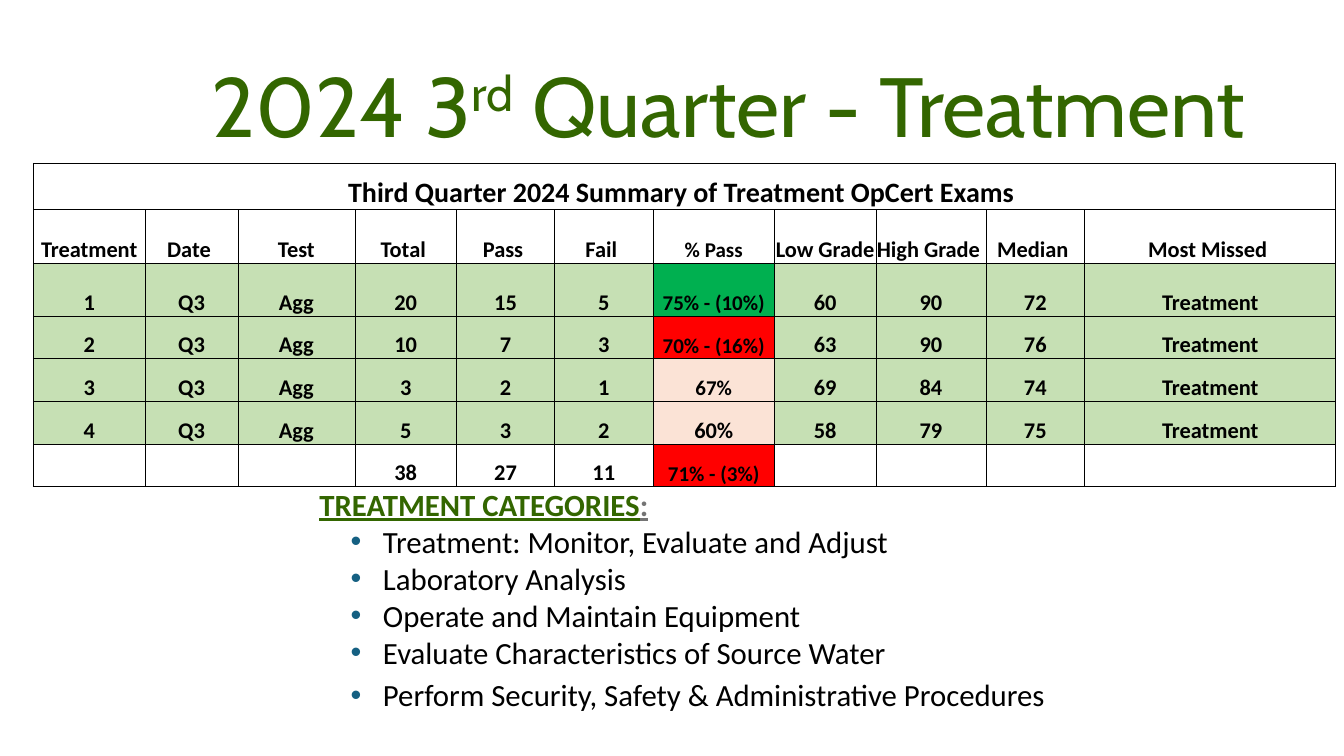
from lxml import etree
from pptx import Presentation
from pptx.dml.color import RGBColor
from pptx.enum.text import MSO_ANCHOR, PP_ALIGN
from pptx.oxml.ns import qn
from pptx.util import Inches, Pt

CENTER, BOTTOM = PP_ALIGN.CENTER, MSO_ANCHOR.BOTTOM

THEME = {
    "title_font": "Cabin", "body_font": "Calibri",
    "title_size": 60, "body_size": 22, "caption_size": 20, "cell_size": 16, "rate_size": 15,
    "heading": "336600", "colon": "747474", "text": "000000", "bullet": "156082",
    "row": "C6E0B4", "up": "00B050", "down": "FF0000", "neutral": "FBE3D6",
}


def set_font(font, face, size, color="text", bold=False):
    font.name = THEME[face]
    font.size = Pt(THEME[size])
    font.bold = bold
    font.color.rgb = RGBColor.from_string(THEME[color])


def add_child(parent, tag, **attributes):
    return etree.SubElement(parent, qn(tag), attributes)


deck = Presentation()
deck.slide_width, deck.slide_height = Inches(13.33), Inches(7.5)
slide = deck.slides.add_slide(deck.slide_layouts[6])

# Title with a raised ordinal
title = slide.shapes.add_textbox(Inches(1.36), Inches(0.49), Inches(11.73), Inches(1.1)).text_frame
title.word_wrap = True
title.vertical_anchor = BOTTOM
headline = title.paragraphs[0]
headline.alignment = CENTER
headline.line_spacing = 0.9
set_font(headline.font, "title_font", "title_size", "heading")
for words, baseline in [("2024 3", "0"), ("rd", "30000"), (" Quarter - Treatment", "0")]:
    part = headline.add_run()
    part.text = words
    part.font._element.set("baseline", baseline)

# Treatment categories
categories = slide.shapes.add_textbox(Inches(3.07), Inches(4.77), Inches(7.88), Inches(2.75)).text_frame
categories.word_wrap = True
heading = categories.paragraphs[0]
for words, color in [("TREATMENT CATEGORIES", "heading"), (":", "colon")]:
    part = heading.add_run()
    part.text = words
    set_font(part.font, "body_font", "body_size", color, bold=True)
    part.font.underline = True

CATEGORIES = [
    "Treatment: Monitor, Evaluate and Adjust",
    "Laboratory Analysis",
    "Operate and Maintain Equipment",
    "Evaluate Characteristics of Source Water",
    "Perform Security, Safety & Administrative Procedures",
]
for category in CATEGORIES:
    item = categories.add_paragraph()
    item.text = category
    properties = item._p.get_or_add_pPr()
    properties.set("marL", str(Inches(0.63)))
    properties.set("indent", str(Inches(-0.32)))
    add_child(add_child(properties, "a:buClr"), "a:srgbClr", val=THEME["bullet"])
    add_child(properties, "a:buFont", typeface="Arial")
    add_child(properties, "a:buChar", char="•")
    set_font(item.font, "body_font", "body_size")
item.space_before = Pt(4)

# Exam results
COLUMN_WIDTHS = [1.11, 0.92, 1.16, 1.01, 0.97, 0.98, 1.2, 1.01, 1.09, 0.98, 2.49]
ROW_HEIGHTS = [0.46, 0.53, 0.53, 0.42, 0.42, 0.43, 0.42]
RATE_COLUMN = 6
RATE_FILLS = [None, None, "up", "down", "neutral", "neutral", "down"]
RESULTS = [
    ["Third Quarter 2024 Summary of Treatment OpCert Exams "] + [""] * 10,
    ["Treatment", "Date ", "Test", "Total ", "Pass ", "Fail ", "% Pass",
     "Low Grade ", "High Grade ", "Median ", "Most Missed "],
    ["1", "Q3", "Agg", "20", "15", "5", "75% - (10%)", "60", "90", "72", "Treatment"],
    ["2", "Q3", "Agg", "10", "7", "3", "70% - (16%)", "63", "90", "76", "Treatment"],
    ["3", "Q3", "Agg", "3", "2", "1", "67%", "69", "84", "74", "Treatment"],
    ["4", "Q3", "Agg", "5", "3", "2", "60%", "58", "79", "75", "Treatment"],
    ["", "", "", "38", "27", "11", "71% - (3%)", "", "", "", ""],
]
TOTALS_ROW = len(RESULTS) - 1

exams = slide.shapes.add_table(
    len(RESULTS), len(COLUMN_WIDTHS), Inches(0.33), Inches(1.62),
    Inches(sum(COLUMN_WIDTHS)), Inches(sum(ROW_HEIGHTS))).table
exams.first_row = exams.horz_banding = False
for column, width in zip(exams.columns, COLUMN_WIDTHS):
    column.width = Inches(width)
for row, height in zip(exams.rows, ROW_HEIGHTS):
    row.height = Inches(height)
exams.cell(0, 0).merge(exams.cell(0, len(COLUMN_WIDTHS) - 1))

for r, values in enumerate(RESULTS):
    for c, value in enumerate(values):
        cell = exams.cell(r, c)
        cell.margin_left = cell.margin_right = cell.margin_top = cell.margin_bottom = 0
        cell.vertical_anchor = BOTTOM

        # Thin rule on every side, then the fill
        for side in ("a:lnL", "a:lnR", "a:lnT", "a:lnB"):
            rule = add_child(cell._tc.get_or_add_tcPr(), side, w=str(Pt(0.5)))
            add_child(add_child(rule, "a:solidFill"), "a:srgbClr", val=THEME["text"])
        fill = RATE_FILLS[r] if c == RATE_COLUMN else "row" if 1 < r < TOTALS_ROW else None
        if fill:
            cell.fill.solid()
            cell.fill.fore_color.rgb = RGBColor.from_string(THEME[fill])
        else:
            cell.fill.background()

        if value:
            cell.text = value
            size = "caption_size" if r == 0 else "cell_size"
            if c == RATE_COLUMN and value != "60%":
                size = "rate_size"
            entry = cell.text_frame.paragraphs[0]
            entry.alignment = CENTER
            set_font(entry.font, "body_font", size, bold=True)

deck.save("out.pptx")
